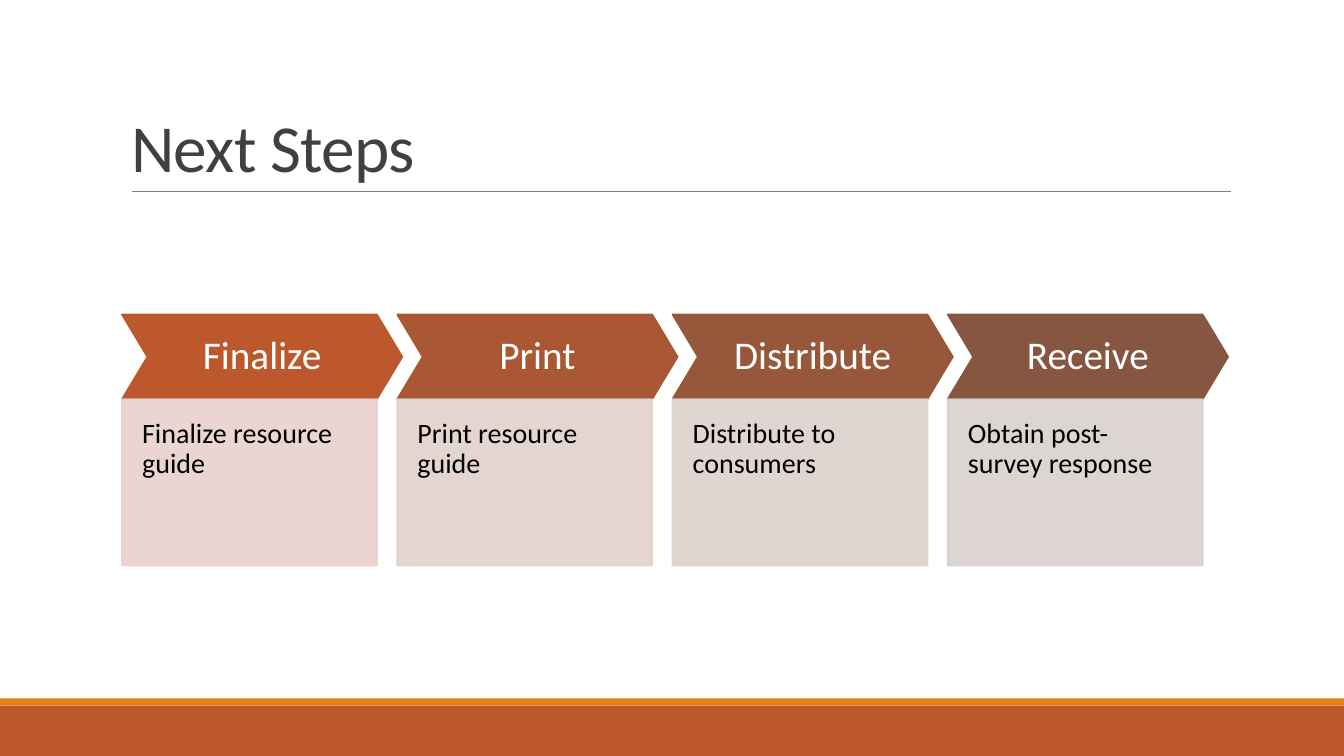
from dataclasses import dataclass

from pptx import Presentation
from pptx.dml.color import RGBColor as Rgb
from pptx.enum.shapes import MSO_CONNECTOR as Link, MSO_SHAPE as Kind
from pptx.enum.text import MSO_ANCHOR as Anchor, MSO_AUTO_SIZE as Fit, PP_ALIGN as Align
from pptx.oxml.ns import qn
from pptx.util import Inches, Pt
from lxml.etree import SubElement as Sub


@dataclass(frozen=True)
class Theme:
    font: str = "Calibri"
    ink: str = "404040"
    rule: str = "808080"
    rust: str = "BD582C"
    amber: str = "E48312"
    white: str = "FFFFFF"
    black: str = "000000"
    title: int = 48
    head: int = 28
    body: int = 20
    edge: float = 1.25
    hair: float = 0.5


@dataclass(frozen=True)
class Grid:
    wide: float = 13.33
    high: float = 7.5
    left: float = 1.21
    top: float = 3.12
    step: float = 2.73
    card: float = 2.53
    tip: float = 0.25
    head: float = 0.84
    body: float = 1.65


THEME = Theme()
GRID = Grid()
STEPS = [
    ("Finalize", "Finalize resource guide", "BD582C", "E8D1CD"),
    ("Print", "Print resource guide", "AA5834", "E3D1CD"),
    ("Distribute", "Distribute to consumers", "97573A", "DED1CE"),
    ("Receive", "Obtain post-survey response", "865640", "D9D1CF"),
]


def apply(item, **values):
    for name, value in values.items():
        setattr(item, name, value)


def box(*sizes):
    return [Inches(size) for size in sizes]


def fade(shape, share):
    """Set the opacity, in percent, of fill and line."""
    for color in shape._element.spPr.iter(qn("a:srgbClr")):
        Sub(color, qn("a:alpha"), val=str(share * 1000))


def block(slide, kind, at, fill, edge=0):
    shape = slide.shapes.add_shape(kind, *box(*at))
    shape.shadow.inherit = False
    shape.fill.solid()
    shape.fill.fore_color.rgb = Rgb.from_string(fill)
    if edge:
        shape.line.color.rgb = Rgb.from_string(fill)
        shape.line.width = Pt(edge)
    else:
        shape.line.fill.background()
    return shape


def write(shape, text, size, color, insets, anchor, align, space=0.9):
    """Fill a shape with one styled paragraph and return its run."""
    frame = shape.text_frame
    sides = ("margin_left", "margin_top", "margin_right", "margin_bottom")
    apply(frame, word_wrap=True, auto_size=Fit.NONE, vertical_anchor=anchor,
          **dict(zip(sides, box(*insets))))
    para = frame.paragraphs[0]
    apply(para, alignment=align, line_spacing=space)
    run = para.add_run()
    run.text = text
    apply(run.font, name=THEME.font, size=Pt(size))
    run.font.color.rgb = Rgb.from_string(color)
    return run


def heading(slide, text):
    title = slide.shapes.title
    apply(title, **dict(zip(("left", "top", "width", "height"),
                            box(1.2, 0.31, 11, 1.59))))
    run = write(title, text, THEME.title, THEME.ink, (0.1, 0.05, 0.1, 0.05),
                Anchor.BOTTOM, Align.LEFT, 0.85)
    run._r.get_or_add_rPr().set("spc", "-50")


def rule(slide, left, right, top):
    line = slide.shapes.add_connector(Link.STRAIGHT, *box(left, top, right, top))
    line.line.color.rgb = Rgb.from_string(THEME.rule)
    line.line.width = Pt(THEME.hair)
    Sub(line._element.spPr, qn("a:effectLst"))


def footer(slide):
    block(slide, Kind.RECTANGLE, (0, 7, GRID.wide, 0.5), THEME.rust)
    block(slide, Kind.RECTANGLE, (0, 6.93, GRID.wide, 0.07), THEME.amber)


def stage(slide, col, head, body, dark, pale):
    left = GRID.left + col * GRID.step
    arrow = block(slide, Kind.CHEVRON,
                  (left, GRID.top, GRID.card + GRID.tip, GRID.head), dark, THEME.edge)
    arrow.adjustments[0] = 0.3
    write(arrow, head, THEME.head, THEME.white, (0.1,) * 4, Anchor.MIDDLE, Align.CENTER)
    card = block(slide, Kind.RECTANGLE,
                 (left, GRID.top + GRID.head, GRID.card, GRID.body), pale, THEME.edge)
    fade(card, 90)
    write(card, body, THEME.body, THEME.black, (0.2, 0.2, 0.2, 0.4),
          Anchor.TOP, Align.LEFT)


def main():
    deck = Presentation()
    apply(deck, slide_width=Inches(GRID.wide), slide_height=Inches(GRID.high))
    slide = deck.slides.add_slide(deck.slide_layouts[5])
    footer(slide)
    rule(slide, 1.31, 12.21, 1.9)
    heading(slide, "Next Steps")
    for col, step in enumerate(STEPS):
        stage(slide, col, *step)
    deck.save("out.pptx")


if __name__ == "__main__":
    main()
